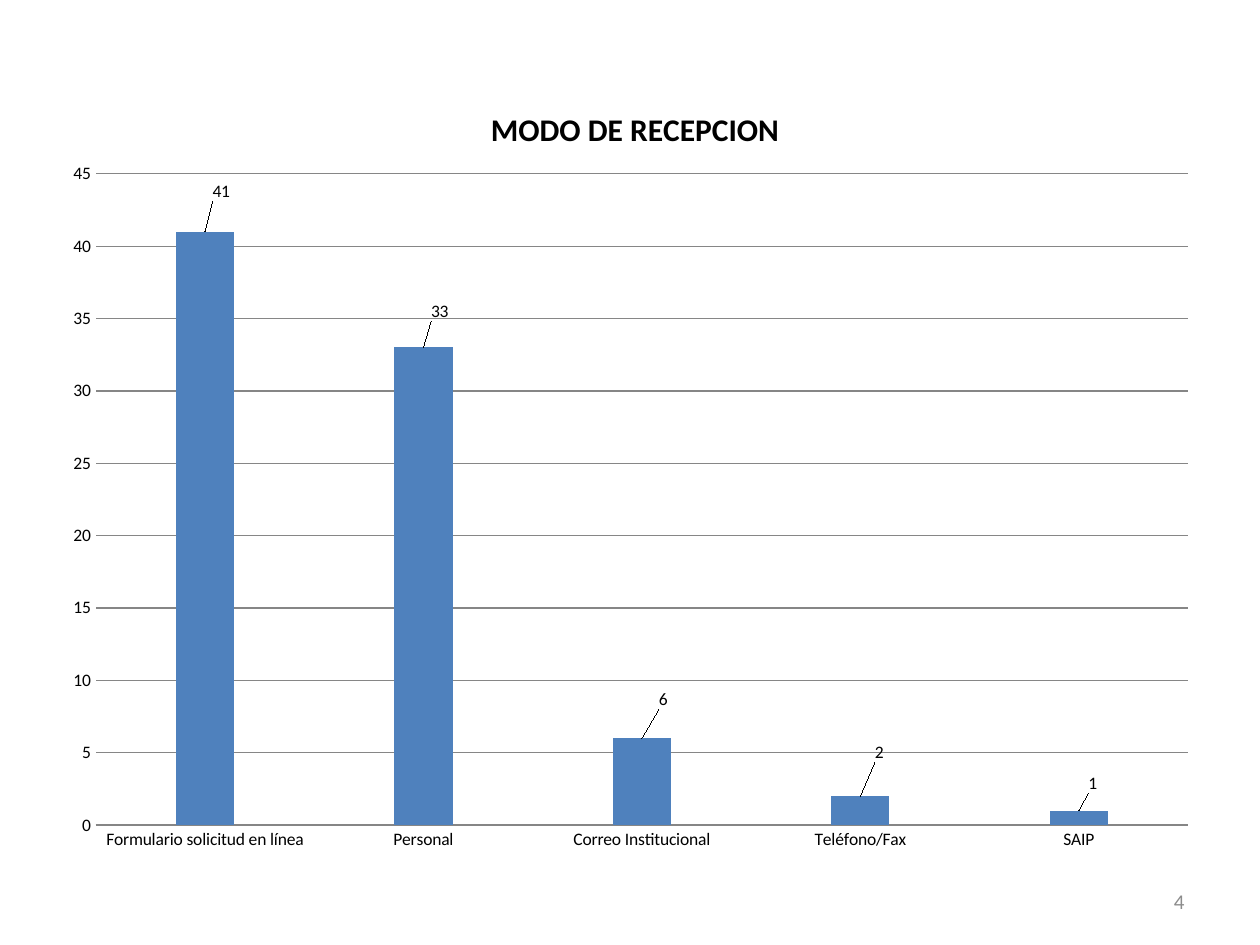
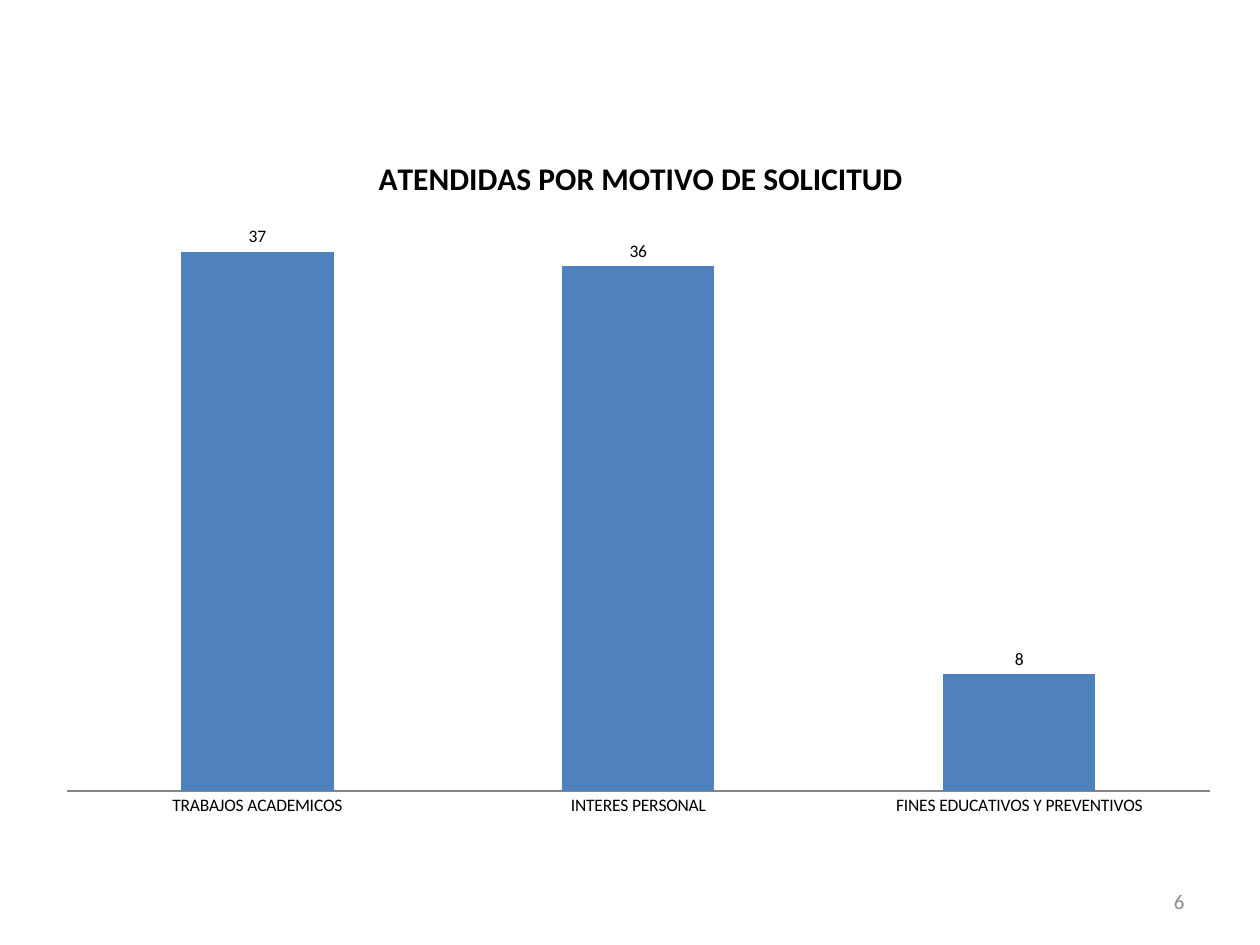
import pptx
import pptx.chart.data
import pptx.dml.color
import pptx.enum.chart
import pptx.enum.text
import pptx.oxml
import pptx.oxml.ns
import pptx.util
from pptx.util import Inches

FONT = "Calibri"
BLACK, GREY, BLUE, AXIS = "000000", "8C8C8C", "4F81BD", "868686"


def color(value):
    return pptx.dml.color.RGBColor.from_string(value)


def format_font(font, size=10, fill=BLACK, bold=False):
    font.name = FONT
    font.size = pptx.util.Pt(size)
    font.bold = bold
    font.color.rgb = color(fill)


def write_text(text_frame, text, align=None, **font_format):
    paragraph = text_frame.paragraphs[0]
    paragraph.alignment = align
    run = paragraph.add_run()
    run.text = text
    format_font(run.font, **font_format)


def add_slide_number(slide, number):
    box = slide.shapes.add_textbox(Inches(7.17), Inches(6.95), Inches(2.33), Inches(0.4))
    box.text_frame.word_wrap = True
    box.text_frame.vertical_anchor = pptx.enum.text.MSO_ANCHOR.MIDDLE
    write_text(box.text_frame, str(number), pptx.enum.text.PP_ALIGN.RIGHT, size=12, fill=GREY)


def set_layout(parent, index, frame_size, offset, size=None, edge=True):
    """Place a chart part, with lengths in inches turned into shares of the chart."""
    for old in parent.findall(pptx.oxml.ns.qn("c:layout")):
        parent.remove(old)
    width, height = frame_size
    parts = ['<c:layoutTarget val="inner"/>'] if size else []
    if edge:
        parts += ['<c:xMode val="edge"/>', '<c:yMode val="edge"/>']
    parts += [f'<c:x val="{offset[0] / width:.4f}"/>', f'<c:y val="{offset[1] / height:.4f}"/>']
    if size:
        parts += [f'<c:w val="{size[0] / width:.4f}"/>', f'<c:h val="{size[1] / height:.4f}"/>']
    parent.insert(index, pptx.oxml.parse_xml(
        f'<c:layout {pptx.oxml.ns.nsdecls("c")}><c:manualLayout>{"".join(parts)}'
        '</c:manualLayout></c:layout>'))


def format_axes(chart, maximum, step, show_values):
    for axis in (chart.category_axis, chart.value_axis):
        axis.major_tick_mark = pptx.enum.chart.XL_TICK_MARK.NONE
        axis.minor_tick_mark = pptx.enum.chart.XL_TICK_MARK.NONE
    chart.category_axis.format.line.color.rgb = color(AXIS)
    value_axis = chart.value_axis
    value_axis.minimum_scale, value_axis.maximum_scale = 0, maximum
    value_axis.major_unit = step
    value_axis.format.line.fill.background()
    value_axis.visible = show_values
    value_axis.has_major_gridlines = show_values
    if show_values:
        value_axis.major_gridlines.format.line.color.rgb = color(AXIS)


def add_column_chart(slide, title, categories, series_values, position, frame_size,
                     title_offset, plot_offset, plot_size, maximum, step,
                     gap, overlap=0, show_values=False):
    data = pptx.chart.data.CategoryChartData()
    data.categories = categories
    for number, values in enumerate(series_values, 1):
        data.add_series(f"Series {number}", values)
    chart = slide.shapes.add_chart(
        pptx.enum.chart.XL_CHART_TYPE.COLUMN_CLUSTERED,
        *map(Inches, position), *map(Inches, frame_size), data).chart
    format_font(chart.font)
    chart.has_legend = False

    # Title and plot area
    write_text(chart.chart_title.text_frame, title, size=18, bold=True)
    set_layout(chart.element.xpath(".//c:title")[0], 1, frame_size, title_offset)
    set_layout(chart.element.xpath(".//c:plotArea")[0], 0, frame_size, plot_offset, plot_size)
    format_axes(chart, maximum, step, show_values)

    # Columns and their values
    plot = chart.plots[0]
    plot.vary_by_categories = False
    plot.gap_width, plot.overlap = gap, overlap
    for series in plot.series:
        series.format.fill.solid()
        series.format.fill.fore_color.rgb = color(BLUE)
        series.data_labels.show_value = True
        series.data_labels.position = pptx.enum.chart.XL_LABEL_POSITION.OUTSIDE_END
    return chart


def shift_labels(chart, series, frame_size, shifts):
    for index in range(len(shifts)):
        series.points[index].data_label.position = pptx.enum.chart.XL_LABEL_POSITION.OUTSIDE_END
    for label, shift in zip(chart.element.xpath(".//c:dLbl"), shifts):
        set_layout(label, 1, frame_size, shift, edge=False)


def main():
    presentation = pptx.Presentation()
    presentation.slide_width, presentation.slide_height = Inches(10), Inches(7.5)
    blank = presentation.slide_layouts[6]

    # Requests by way of reception; the empty outer series keep the columns narrow
    slide = presentation.slides.add_slide(blank)
    add_slide_number(slide, 4)
    categories = ["Formulario solicitud en línea", "Personal", "Correo Institucional",
                  "Teléfono/Fax", "SAIP"]
    empty = [None] * len(categories)
    frame_size = (9.22, 6.33)
    chart = add_column_chart(
        slide, "MODO DE RECEPCION", categories, [empty, [41, 33, 6, 2, 1], empty],
        position=(0.39, 0.55), frame_size=frame_size, title_offset=(3.46, 0.26),
        plot_offset=(0.37, 0.83), plot_size=(8.67, 5.17),
        maximum=45, step=5, gap=75, show_values=True)
    shift_labels(chart, chart.plots[0].series[1], frame_size,
                 [(0.13, -0.2), (0.13, -0.17), (0.17, -0.19), (0.15, -0.23), (0.11, -0.1)])

    # Requests answered by motive
    slide = presentation.slides.add_slide(blank)
    add_slide_number(slide, 6)
    add_column_chart(
        slide, "ATENDIDAS POR MOTIVO DE SOLICITUD",
        ["TRABAJOS ACADEMICOS", "INTERES PERSONAL", "FINES EDUCATIVOS Y PREVENTIVOS"],
        [[37, 36, 8]],
        position=(0.39, 0.94), frame_size=(9.3, 5.78), title_offset=(2.57, 0.26),
        plot_offset=(0.14, 0.71), plot_size=(9.07, 4.63),
        maximum=40, step=5, gap=150, overlap=-25)

    presentation.save("out.pptx")


if __name__ == "__main__":
    main()
